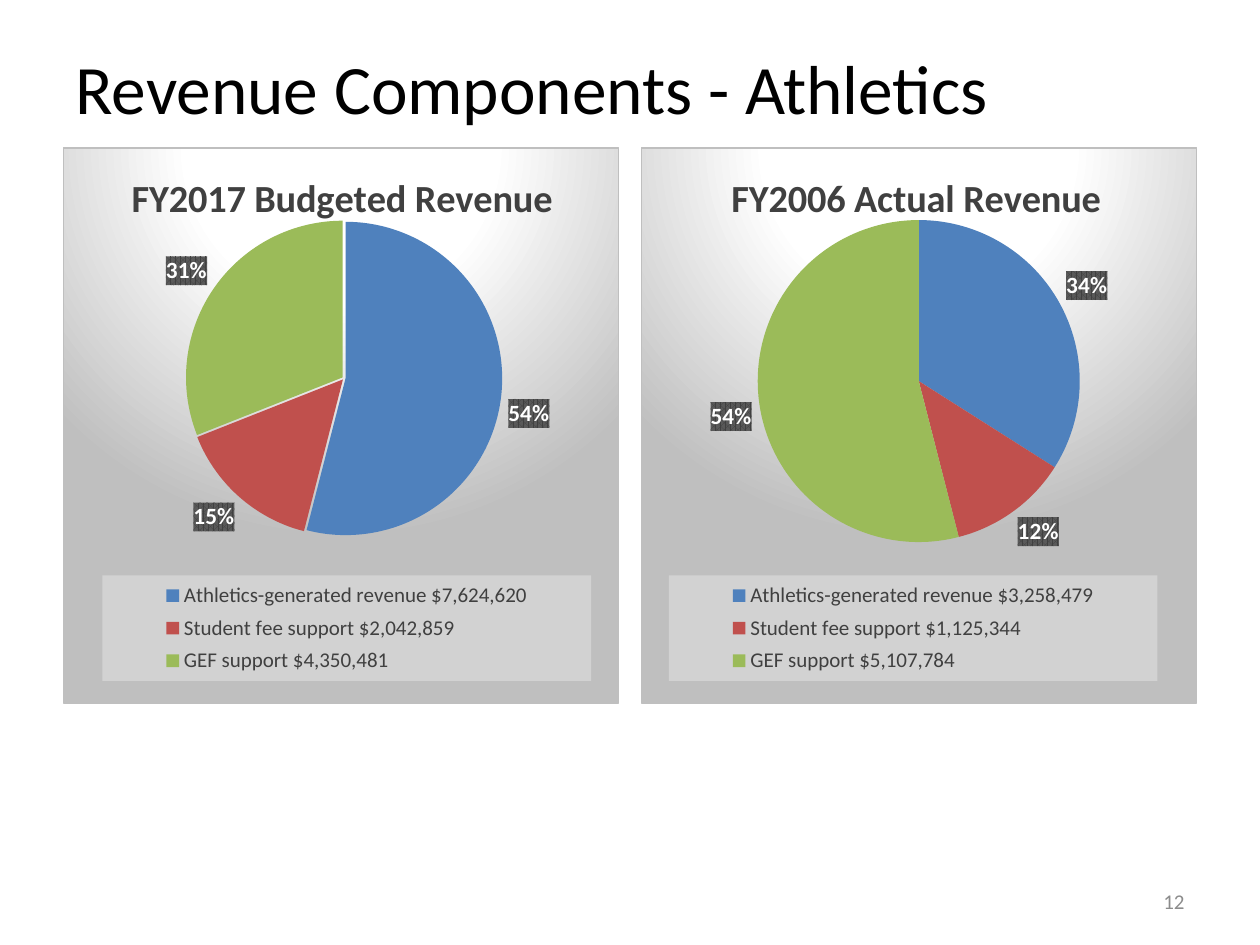
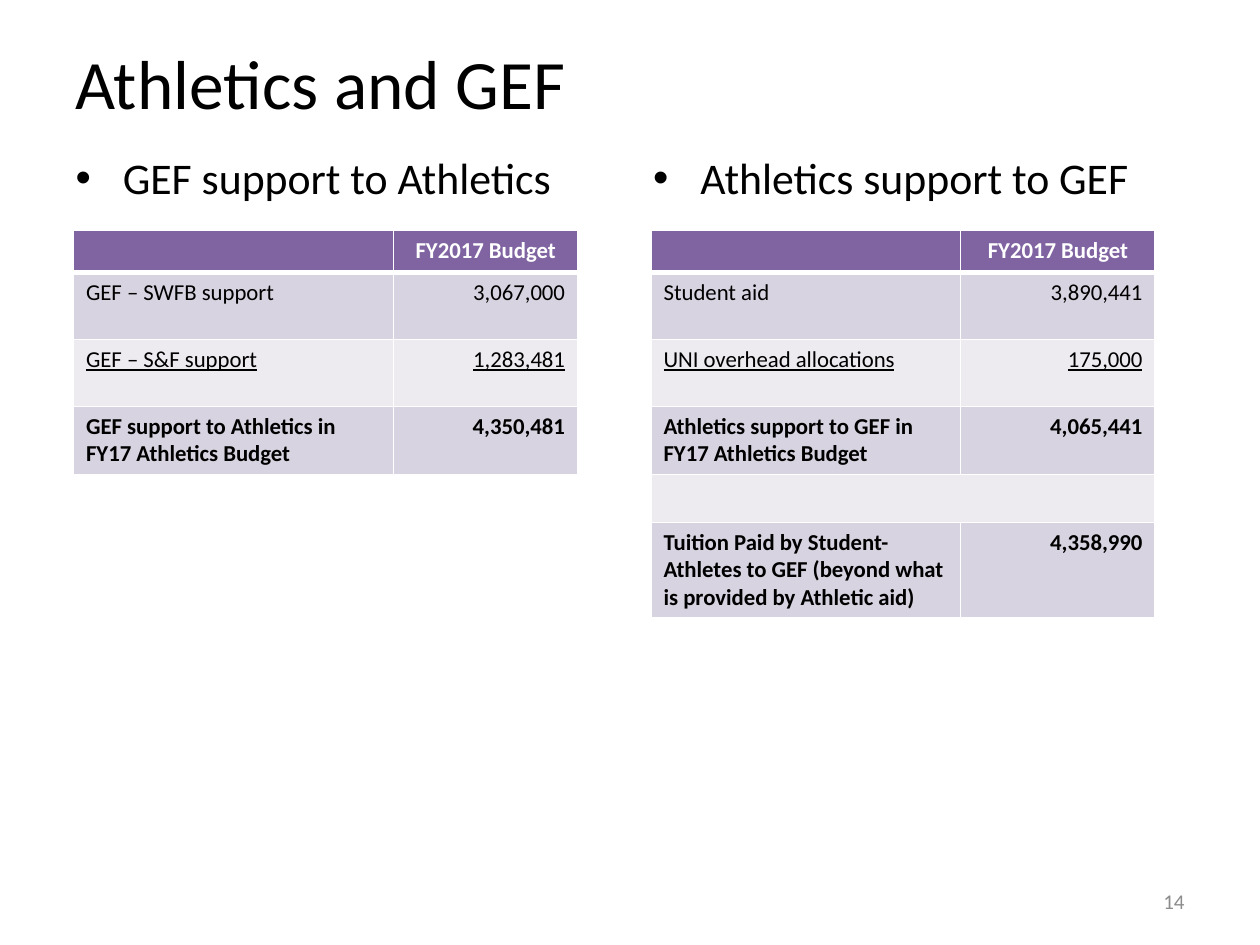
from collections import namedtuple
from dataclasses import dataclass

from lxml import etree
from pptx import Presentation
from pptx import util as u
from pptx.chart.data import CategoryChartData
from pptx.dml.color import RGBColor
from pptx.enum import chart as charts, text
from pptx.oxml import parse_xml
from pptx.oxml.ns import nsdecls, qn

Pt = u.Pt
Box = namedtuple("Box", "left top width height")


@dataclass(frozen=True)
class Theme:
    font: str = "Calibri"
    ink: str = "000000"
    white: str = "FFFFFF"
    grey_text: str = "8C8C8C"
    chart_text: str = "404040"
    label_stripe: str = "595959"
    panel_edge: str = "BFBFBF"
    legend_fill: str = "F2F2F2"
    header: str = "8064A2"
    bands: tuple = ("D8D3E0", "EDEAF0")
    slices: tuple = ("4F81BD", "C0504D", "9BBB59")
    title_size: float = 39.6
    bullet_size: float = 25
    chart_title_size: float = 22
    label_size: float = 13.3
    table_size: float = 13
    small_size: float = 12


THEME = Theme()
MARGIN = 36
COLUMN = 318
GUTTER = 12
COLUMN_LEFTS = [MARGIN + i * (COLUMN + GUTTER) for i in range(2)]
TITLE_TOP = 21.6
PAGE_NUMBER_BOX = Box(516, 500.5, 168, 28.8)


def style(font, size, color, bold=None, underline=None):
    font.name = THEME.font
    font.size = Pt(size)
    font.bold = bold
    font.underline = underline
    font.color.rgb = RGBColor.from_string(color)


def write(paragraph, words, size, color, **emphasis):
    run = paragraph.add_run()
    run.text = words
    style(run.font, size, color, **emphasis)


def place(part, box):
    part.left, part.top, part.width, part.height = map(Pt, box)


def add_title(slide, words, height):
    title = slide.shapes.title
    place(title, Box(MARGIN, TITLE_TOP, 648, height))
    frame = title.text_frame
    frame.auto_size = text.MSO_AUTO_SIZE.NONE
    frame.vertical_anchor = text.MSO_ANCHOR.MIDDLE
    frame.paragraphs[0].alignment = text.PP_ALIGN.LEFT
    write(frame.paragraphs[0], words, THEME.title_size, THEME.ink)


def add_page_number(slide, number):
    frame = slide.shapes.add_textbox(*map(Pt, PAGE_NUMBER_BOX)).text_frame
    frame.word_wrap = True
    frame.vertical_anchor = text.MSO_ANCHOR.MIDDLE
    frame.paragraphs[0].alignment = text.PP_ALIGN.RIGHT
    write(frame.paragraphs[0], number, THEME.small_size, THEME.grey_text)


def solid(color, extra=""):
    return f'<a:solidFill><a:srgbClr val="{color}">{extra}</a:srgbClr></a:solidFill>'


def chart_fill(inner):
    return parse_xml(f'<c:spPr {nsdecls("c", "a")}>{inner}</c:spPr>')


def chart_layout(parent, index, target="", **fractions):
    for old in parent.findall(qn("c:layout")):
        parent.remove(old)
    modes = "".join(f'<c:{axis}Mode val="edge"/>' for axis in "xy")
    values = "".join(f'<c:{key} val="{value}"/>' for key, value in fractions.items())
    parent.insert(index, parse_xml(
        f'<c:layout {nsdecls("c")}><c:manualLayout>{target}{modes}{values}'
        "</c:manualLayout></c:layout>"))


def fill_panel(chart):
    stops = "".join(
        f'<a:gs pos="{pos}"><a:srgbClr val="{color}"/></a:gs>'
        for pos, color in ((0, THEME.white), (39000, THEME.white), (100000, THEME.panel_edge)))
    panel = chart_fill(
        f'<a:gradFill flip="none" rotWithShape="1"><a:gsLst>{stops}</a:gsLst>'
        '<a:path path="circle"><a:fillToRect l="50000" t="-80000" r="50000" b="180000"/>'
        f'</a:path></a:gradFill><a:ln w="9525">{solid(THEME.panel_edge)}</a:ln>')
    chart.element.find(qn("c:chart")).addnext(panel)


def add_percent_labels(pie):
    pie.has_data_labels = True
    labels = pie.data_labels
    labels.show_percentage = True
    labels.show_value = False
    labels.number_format = "0%"
    labels.number_format_is_linked = False
    labels.position = charts.XL_LABEL_POSITION.OUTSIDE_END
    style(labels.font, THEME.label_size, THEME.white, bold=True)
    stripes = chart_fill(
        f'<a:pattFill prst="pct75"><a:fgClr><a:srgbClr val="{THEME.chart_text}"/></a:fgClr>'
        f'<a:bgClr><a:srgbClr val="{THEME.label_stripe}"/></a:bgClr></a:pattFill>')
    pie._element.find(qn("c:dLbls")).find(qn("c:txPr")).addprevious(stripes)


def add_legend(chart, left):
    chart.has_legend = True
    legend = chart.legend
    legend.position = charts.XL_LEGEND_POSITION.RIGHT
    legend.include_in_layout = False
    style(legend.font, THEME.small_size, THEME.chart_text)
    node = legend._element
    chart_layout(node, 1, x=left, y=0.77, w=0.88, h=0.19)
    node.find(qn("c:overlay")).addnext(
        chart_fill(solid(THEME.legend_fill, '<a:alpha val="39000"/>')))


def add_revenue_pie(slide, box, revenue):
    data = CategoryChartData()
    data.categories = revenue["sources"]
    data.add_series("Series 1", revenue["shares"])
    chart = slide.shapes.add_chart(
        charts.XL_CHART_TYPE.PIE, *map(Pt, box), data).chart
    style(chart.font, 10, THEME.ink)

    chart.has_title = True
    heading = chart.chart_title
    write(heading.text_frame.paragraphs[0], revenue["heading"],
          THEME.chart_title_size, THEME.chart_text, bold=True)
    heading.include_in_layout = False
    chart_layout(heading._element, 1, x=revenue["heading_left"], y=0.03)

    pie = chart.plots[0]
    pie.vary_by_categories = True
    series = pie.series[0]
    for index, color in enumerate(THEME.slices):
        slice_fill = series.points[index].format.fill
        slice_fill.solid()
        slice_fill.fore_color.rgb = RGBColor.from_string(color)
    if revenue["explosion"]:
        explosion = parse_xml(
            f'<c:explosion {nsdecls("c")} val="{revenue["explosion"]}"/>')
        series._element.find(qn("c:dPt")).addprevious(explosion)
    add_percent_labels(pie)
    add_legend(chart, revenue["legend_left"])

    left, size = revenue["pie"]
    chart_layout(chart.element.find(".//" + qn("c:plotArea")), 0,
                 '<c:layoutTarget val="inner"/>', x=left, y=0.13, w=size, h=size)
    fill_panel(chart)


def set_borders(cell, bottom):
    properties = cell._tc.get_or_add_tcPr()
    for side, width in (("L", 1), ("R", 1), ("T", 1), ("B", bottom)):
        properties.append(parse_xml(
            f'<a:ln{side} {nsdecls("a")} w="{Pt(width)}">{solid(THEME.white)}</a:ln{side}>'))


def fill_cell(cell, words, color, align, header=False, **emphasis):
    set_borders(cell, 3 if header else 1)
    cell.fill.solid()
    cell.fill.fore_color.rgb = RGBColor.from_string(color)
    paragraph = cell.text_frame.paragraphs[0]
    paragraph.alignment = align
    if words:
        write(paragraph, words, THEME.table_size,
              THEME.white if header else THEME.ink, **emphasis)
    else:
        end = etree.SubElement(paragraph._p, qn("a:endParaRPr"))
        end.set("sz", str(THEME.table_size * 100))


def add_budget_table(slide, left, top, widths, entries):
    heights = [24] + [38.2 if entry else 27.4 for entry in entries]
    table = slide.shapes.add_table(
        len(heights), 2, Pt(left), Pt(top), Pt(sum(widths)), Pt(sum(heights))).table
    for column, width in zip(table.columns, widths):
        column.width = Pt(width)
    for row, height in zip(table.rows, heights):
        row.height = Pt(height)
    for column, words in enumerate(("", "FY2017 Budget")):
        fill_cell(table.cell(0, column), words, THEME.header,
                  text.PP_ALIGN.CENTER, header=True, bold=True)
    for row, entry in enumerate(entries, 1):
        label, amount, emphasis = entry or ("", "", {})
        band = THEME.bands[(row - 1) % 2]
        fill_cell(table.cell(row, 0), label, band, text.PP_ALIGN.LEFT, **emphasis)
        fill_cell(table.cell(row, 1), amount, band, text.PP_ALIGN.RIGHT, **emphasis)
        if not entry:
            table.cell(row, 0).merge(table.cell(row, 1))


def add_support_column(slide, body, box, support):
    place(body, box)
    frame = body.text_frame
    frame.auto_size = text.MSO_AUTO_SIZE.NONE
    paragraph = frame.paragraphs[0]
    properties = paragraph._p.get_or_add_pPr()
    properties.set("marL", str(Pt(27)))
    properties.set("indent", str(Pt(-27)))
    etree.SubElement(properties, qn("a:buChar")).set("char", "•")
    paragraph.space_before = Pt(0)
    write(paragraph, support["heading"], THEME.bullet_size, THEME.ink)
    add_budget_table(slide, box.left + 6, box.top + 49, support["widths"], support["entries"])


def revenue_slide(deck, title, number, revenues):
    slide = deck.slides.add_slide(deck.slide_layouts[5])
    add_title(slide, title, 56)
    for left, revenue in zip(COLUMN_LEFTS, revenues):
        add_revenue_pie(slide, Box(left, 84.2, COLUMN, COLUMN), revenue)
    add_page_number(slide, number)


def support_slide(deck, title, number, supports):
    slide = deck.slides.add_slide(deck.slide_layouts[3])
    add_title(slide, title, 50.4)
    for index, (left, support) in enumerate(zip(COLUMN_LEFTS, supports), 1):
        add_support_column(slide, slide.placeholders[index],
                           Box(left, 82.8, COLUMN, 336), support)
    add_page_number(slide, number)


UNDERLINED = {"underline": True}
TOTAL = {"bold": True}

REVENUES = [
    {"heading": "FY2017 Budgeted Revenue", "heading_left": 0.11, "shares": (54, 15, 31),
     "sources": ("Athletics-generated revenue $7,624,620",
                 "Student fee support $2,042,859", "GEF support $4,350,481"),
     "explosion": 1, "pie": (0.22, 0.57), "legend_left": 0.07},
    {"heading": "FY2006 Actual Revenue", "heading_left": 0.15, "shares": (34, 12, 54),
     "sources": ("Athletics-generated revenue $3,258,479",
                 "Student fee support $1,125,344", "GEF support $5,107,784"),
     "explosion": 0, "pie": (0.21, 0.58), "legend_left": 0.05},
]

SUPPORTS = [
    {"heading": "GEF support to Athletics", "widths": (183, 105), "entries": [
        ("GEF – SWFB support", "3,067,000", {}),
        ("GEF – S&F support", "1,283,481", UNDERLINED),
        ("GEF support to Athletics in FY17 Athletics Budget", "4,350,481", TOTAL)]},
    {"heading": "Athletics support to GEF", "widths": (177, 111), "entries": [
        ("Student aid", "3,890,441", {}),
        ("UNI overhead allocations", "175,000", UNDERLINED),
        ("Athletics support to GEF in FY17 Athletics Budget", "4,065,441", TOTAL),
        None,
        ("Tuition Paid by Student-Athletes to GEF (beyond what is provided by Athletic aid)",
         "4,358,990", TOTAL)]},
]


def main():
    deck = Presentation()
    deck.slide_width, deck.slide_height = Pt(720), Pt(540)
    revenue_slide(deck, "Revenue Components - Athletics", "12", REVENUES)
    support_slide(deck, "Athletics and GEF", "14", SUPPORTS)
    deck.save("out.pptx")


if __name__ == "__main__":
    main()
